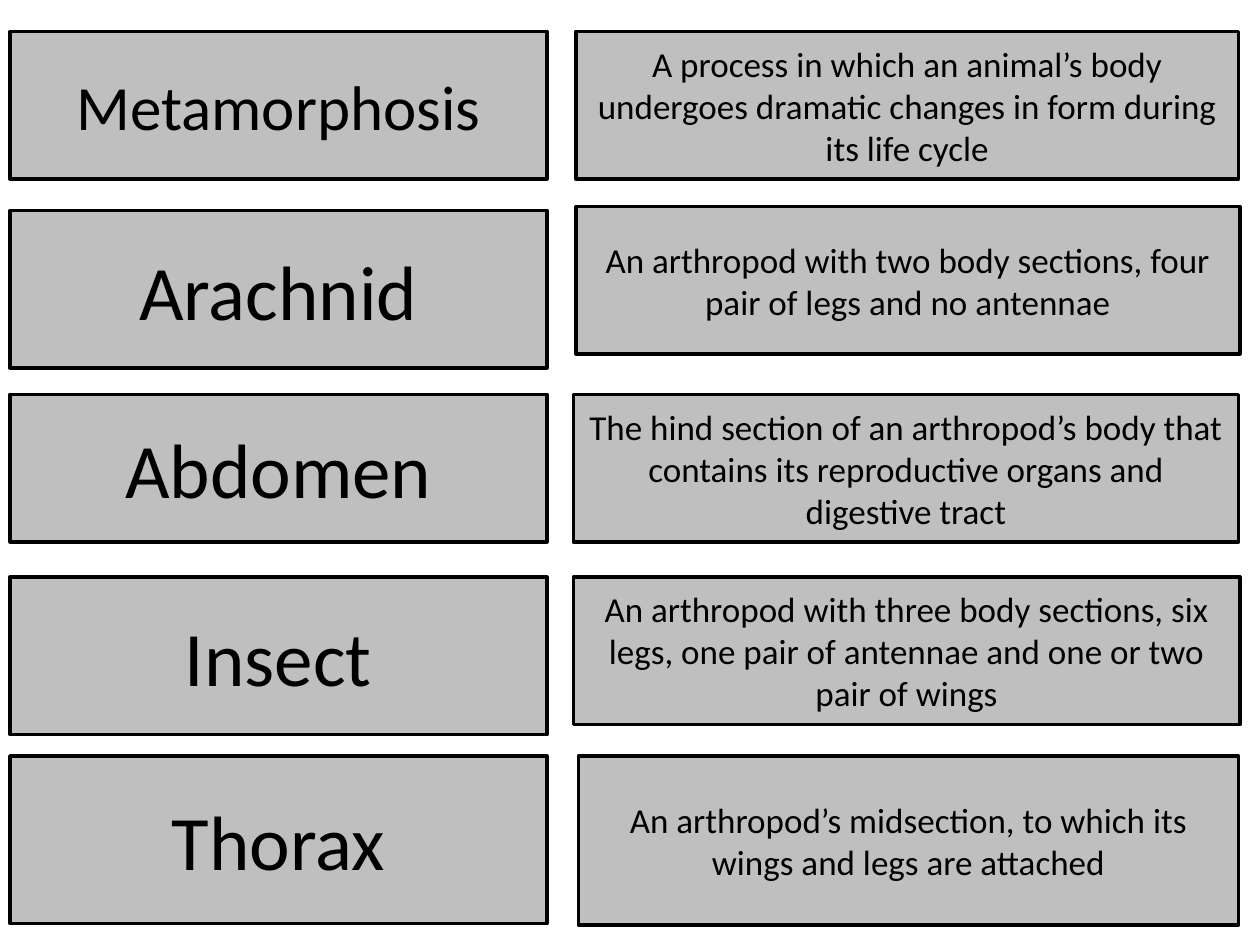
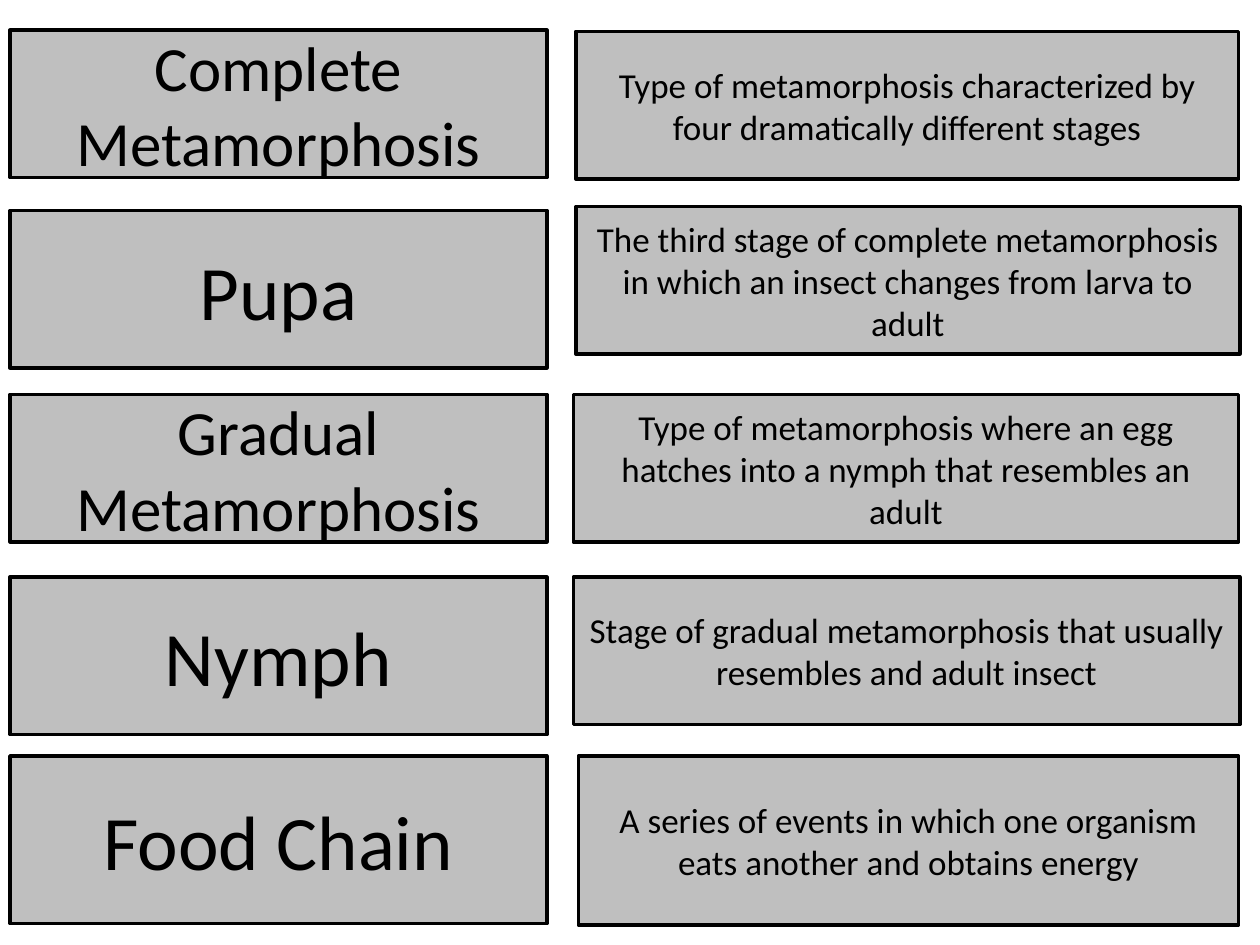
"""Build two slides of arthropod vocabulary cards, terms beside definitions."""
from dataclasses import dataclass

import pptx
import pptx.dml.color
import pptx.enum.shapes
import pptx.enum.text
import pptx.slide
import pptx.util
from pptx.util import Inches

CARD_GREY = pptx.dml.color.RGBColor(0xBF, 0xBF, 0xBF)
BLACK = pptx.dml.color.RGBColor(0, 0, 0)
FONT = "Calibri"
TERM_SIZE = 44
LONG_TERM_SIZE = 36
DEFINITION_SIZE = 20
TERM_LEFT = 0.08
TERM_WIDTH = 4.26


@dataclass(frozen=True)
class Frame:
    """Place of a card in inches."""

    left: float
    top: float
    width: float
    height: float


@dataclass(frozen=True)
class Entry:
    """A term, its definition, the term's text size and its nudge in inches."""

    term: str
    definition: str
    term_size: int = TERM_SIZE
    term_nudge: float = 0


TERM_ROWS = [(0.25, 1.17), (1.67, 1.25), (3.13, 1.17), (4.58, 1.25), (6, 1.33)]
DEFINITION_FRAMES = [
    Frame(4.57, 0.25, 5.26, 1.17),
    Frame(4.57, 1.64, 5.27, 1.17),
    Frame(4.55, 3.13, 5.28, 1.17),
    Frame(4.55, 4.58, 5.29, 1.17),
    Frame(4.59, 6, 5.24, 1.34),
]

ARTHROPOD_ENTRIES = [
    Entry("Metamorphosis",
          "A process in which an animal’s body undergoes dramatic changes "
          "in form during its life cycle", LONG_TERM_SIZE),
    Entry("Arachnid",
          "An arthropod with two body sections, four pair of legs and no antennae"),
    Entry("Abdomen",
          "The hind section of an arthropod’s body that contains its "
          "reproductive organs and digestive tract"),
    Entry("Insect",
          "An arthropod with three body sections, six legs, one pair of "
          "antennae and one or two pair of wings"),
    Entry("Thorax",
          "An arthropod’s midsection, to which its wings and legs are attached"),
]
LIFE_CYCLE_ENTRIES = [
    Entry("Complete\nMetamorphosis",
          "Type of metamorphosis characterized by four dramatically different stages",
          LONG_TERM_SIZE, -0.01),
    Entry("Pupa",
          "The third stage of complete metamorphosis in which an insect "
          "changes from larva to adult"),
    Entry("Gradual Metamorphosis",
          "Type of metamorphosis where an egg hatches into a nymph that "
          "resembles an adult", LONG_TERM_SIZE),
    Entry("Nymph",
          "Stage of gradual metamorphosis that usually resembles and adult insect"),
    Entry("Food Chain",
          "A series of events in which one organism eats another and obtains energy"),
]


def add_card(page: pptx.slide.Slide, frame: Frame, text: str, *, size: int) -> None:
    """Draw a grey outlined card with centred text, one paragraph a line."""
    box = page.shapes.add_shape(
        pptx.enum.shapes.MSO_SHAPE.FLOWCHART_PROCESS,
        Inches(frame.left), Inches(frame.top), Inches(frame.width), Inches(frame.height))
    box.shadow.inherit = False
    box.fill.solid()
    box.fill.fore_color.rgb = CARD_GREY
    box.line.color.rgb = BLACK
    box.line.width = pptx.util.Pt(2)
    box.text_frame.word_wrap = True
    box.text_frame.vertical_anchor = pptx.enum.text.MSO_ANCHOR.MIDDLE
    box.text_frame.text = text
    for para in box.text_frame.paragraphs:
        para.alignment = pptx.enum.text.PP_ALIGN.CENTER
        for span in para.runs:
            span.font.name = FONT
            span.font.size = pptx.util.Pt(size)
            span.font.color.rgb = BLACK


def add_vocabulary_page(deck, entries: list[Entry]) -> None:
    """Add a slide that pairs each term with its definition."""
    page = deck.slides.add_slide(deck.slide_layouts.get_by_name("Blank"))
    for entry, (top, height), definition_frame in zip(entries, TERM_ROWS, DEFINITION_FRAMES):
        term_frame = Frame(TERM_LEFT, top + entry.term_nudge, TERM_WIDTH, height)
        add_card(page, term_frame, entry.term, size=entry.term_size)
        add_card(page, definition_frame, entry.definition, size=DEFINITION_SIZE)


def main() -> None:
    """Build and save the deck."""
    deck = pptx.Presentation()
    deck.slide_width = Inches(10)
    deck.slide_height = Inches(7.5)
    for entries in (ARTHROPOD_ENTRIES, LIFE_CYCLE_ENTRIES):
        add_vocabulary_page(deck, entries)
    deck.save("out.pptx")


if __name__ == "__main__":
    main()
